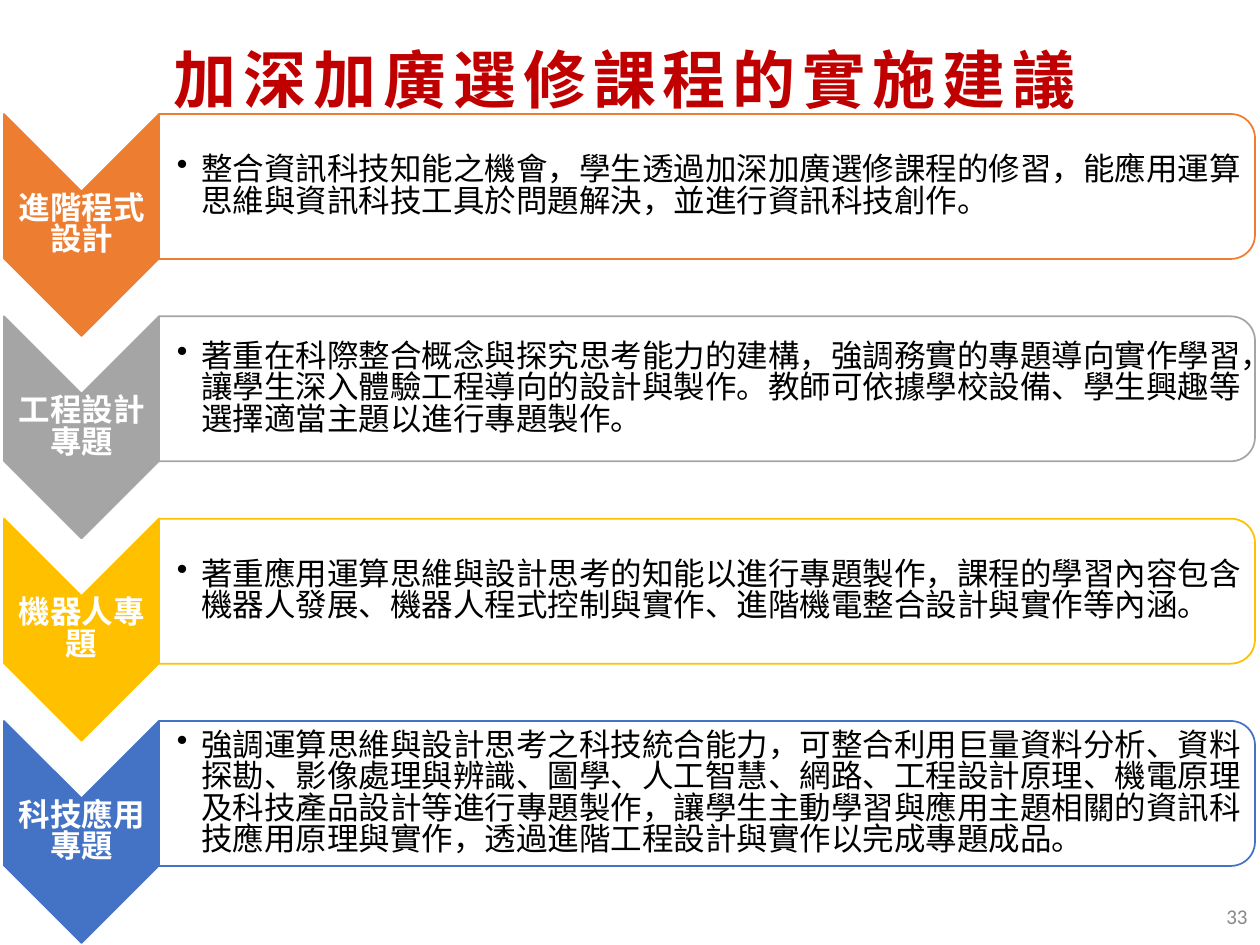
from lxml.etree import SubElement
from pptx import Presentation
from pptx.dml.color import RGBColor
from pptx.enum.shapes import MSO_SHAPE
from pptx.enum.text import MSO_ANCHOR, PP_ALIGN
from pptx.oxml.ns import qn
from pptx.util import Pt

# Content
TITLE = "加深加廣選修課程的實施建議"
PAGE = "33"
ROWS = [
    ("進階程式設計", "orange",
     "整合資訊科技知能之機會，學生透過加深加廣選修課程的修習，能應用運算思維與資訊科技工具於問題解決，並進行資訊科技創作。"),
    ("工程設計專題", "gray",
     "著重在科際整合概念與探究思考能力的建構，強調務實的專題導向實作學習，讓學生深入體驗工程導向的設計與製作。"
     "教師可依據學校設備、學生興趣等選擇適當主題以進行專題製作。"),
    ("機器人專題", "gold",
     "著重應用運算思維與設計思考的知能以進行專題製作，課程的學習內容包含機器人發展、機器人程式控制與實作、"
     "進階機電整合設計與實作等內涵。"),
    ("科技應用專題", "blue",
     "強調運算思維與設計思考之科技統合能力，可整合利用巨量資料分析、資料探勘、影像處理與辨識、圖學、人工智慧、網路、"
     "工程設計原理、機電原理及科技產品設計等進行專題製作，讓學生主動學習與應用主題相關的資訊科技應用原理與實作，"
     "透過進階工程設計與實作以完成專題成品。"),
]
COLORS = {"orange": "ED7D31", "gray": "A5A5A5", "gold": "FFC000", "blue": "4472C4",
          "red": "C00000", "white": "FFFFFF", "black": "000000", "page": "898989"}
CJK = "Noto Sans CJK SC"

# Layout in px, 126 to the inch
TOP, SPAN = 114, 607


def emu(px):
    return round(px * 914400 / 126)


def rgb(name):
    return RGBColor.from_string(COLORS[name])


def add_text(box, text, size, color, align, font=CJK, bold=False, pad=None):
    shape = slide.shapes.add_textbox(*map(emu, box))
    frame = shape.text_frame
    frame.word_wrap = True
    frame.vertical_anchor = MSO_ANCHOR.MIDDLE
    if pad:
        (frame.margin_left, frame.margin_top,
         frame.margin_right, frame.margin_bottom) = map(emu, pad)
    frame.text = text
    para = frame.paragraphs[0]
    para.alignment = align
    run = para.runs[0]
    run.font.size, run.font.bold, run.font.name = Pt(size), bold, font
    run.font.color.rgb = rgb(color)
    SubElement(run.font._element, qn("a:ea"), typeface=font)
    return para


def add_turned(kind, box, fill, line):
    """Place a shape turned by 90 degrees so that it covers the given box."""
    x, y, w, h = box
    shape = slide.shapes.add_shape(
        kind, emu(x + (w - h) / 2), emu(y + (h - w) / 2), emu(h), emu(w))
    shape.rotation = 90
    shape.shadow.inherit = False
    shape.fill.solid()
    shape.fill.fore_color.rgb = rgb(fill)
    shape.line.color.rgb = rgb(line)
    shape.line.width = Pt(1)
    return shape


def add_bullet(para):
    props = para._p.get_or_add_pPr()
    props.set("marL", str(emu(24)))
    props.set("indent", str(emu(-24)))
    SubElement(props, qn("a:buChar"), char="•")


deck = Presentation()
deck.slide_width, deck.slide_height = emu(1260), emu(945)
slide = deck.slides.add_slide(deck.slide_layouts[6])

# Title
head = add_text((34, 16, 1182, 124), TITLE, 36, "red", PP_ALIGN.CENTER, bold=True)
head.runs[0].font._element.set("spc", "400")

# Course rows
for i, (label, color, body) in enumerate(ROWS):
    y = TOP + SPAN * i / (len(ROWS) - 1)
    add_turned(MSO_SHAPE.CHEVRON, (4, y, 155, 222), color, color)
    name = add_text((4, y + 78, 155, 67), label, 18, "white", PP_ALIGN.CENTER,
                    bold=True, pad=(1, 1, 1, 1))
    panel = add_turned(MSO_SHAPE.ROUND_2_SAME_RECTANGLE, (159, y, 1096, 145),
                       "white", color)
    tint = panel.fill._xPr.find(qn("a:solidFill"))[0]
    SubElement(tint, qn("a:alpha"), val="90000")
    note = add_text((159, y + 8, 1089, 130), body, 18, "black", PP_ALIGN.LEFT,
                    pad=(18, 1, 1, 1))
    for para, gap in ((name, 6), (note, 3)):
        para.line_spacing = Pt(18)
        para.space_after = Pt(gap)
    add_bullet(note)

# Page number
add_text((976, 891, 284, 50), PAGE, 12, "page", PP_ALIGN.RIGHT, font="Calibri")

deck.save("out.pptx")
